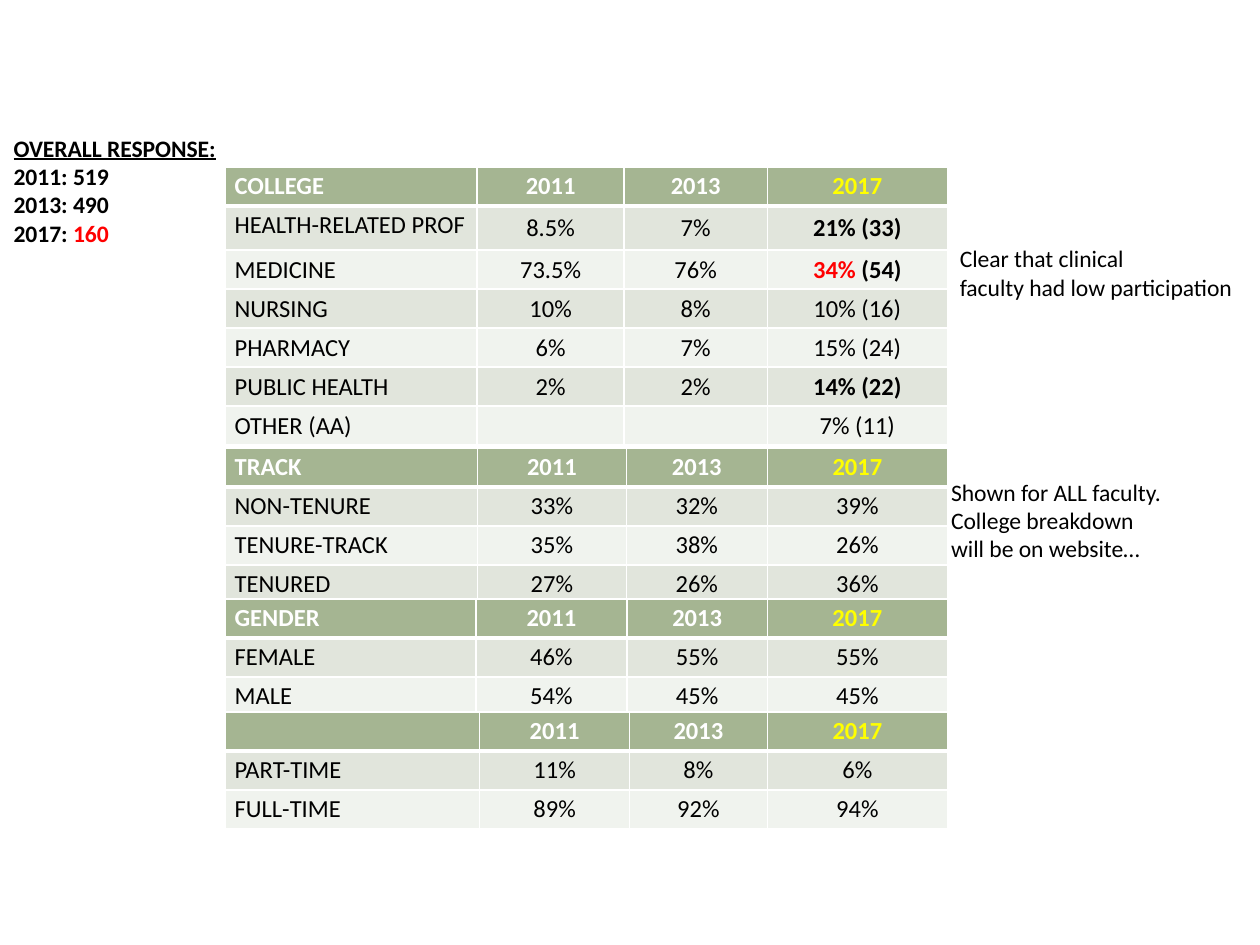
from dataclasses import dataclass
from typing import NamedTuple

import lxml.etree
import pptx
import pptx.dml.color
import pptx.enum.text
import pptx.oxml.ns
import pptx.util

Pt = pptx.util.Pt
FONT = "Calibri"
BLACK, WHITE, RED, YELLOW = "000000", "FFFFFF", "FF0000", "FFFF00"
HEADER_FILL = "A5B592"
BAND_FILLS = ("E1E5DC", "F0F3EE")
TABLE_LEFT, TABLE_WIDTH, LAST_COLUMN = 128.9, 412.6, 103
ROW_HEIGHT = 22.3
TABLE_SIZE, NOTE_SIZE = 14, 13.5


class Span(NamedTuple):
    text: str
    color: str = BLACK
    bold: bool = False
    underline: bool = False


Spans = tuple[Span, ...]


@dataclass
class Note:
    left: float
    top: float
    width: float
    height: float
    lines: list[Spans]


@dataclass
class Breakdown:
    title: str
    top: float
    columns: tuple[float, float]
    rows: list[tuple[str | Spans, ...]]
    first_row: float = ROW_HEIGHT


def bold(text: str, color: str = BLACK, underline: bool = False) -> Span:
    return Span(text, color, True, underline)


NOTES = [
    Note(0.7, 72.7, 131.8, 72.7, [
        (bold("OVERALL RESPONSE:", underline=True),),
        (bold("2011: 519"),),
        (bold("2013: 490"),),
        (bold("2017:"), bold(" 160", RED)),
    ]),
    Note(541.4, 136.1, 172.8, 40.3, [
        (Span("Clear that clinical"),),
        (Span("faculty had low participation"),),
    ]),
    Note(536.4, 269.3, 136.1, 56.2, [
        (Span("Shown for ALL faculty."),),
        (Span("College breakdown"),),
        (Span("will be on website…"),),
    ]),
]

BREAKDOWNS = [
    Breakdown("TRACK", 255.9, (144, 85), [
        ("NON-TENURE", "33%", "32%", "39%"),
        ("TENURE-TRACK", "35%", "38%", "26%"),
        ("TENURED", "27%", "26%", "36%"),
    ]),
    Breakdown("GENDER", 342.3, (143, 86.5), [
        ("FEMALE", "46%", "55%", "55%"),
        ("MALE", "54%", "45%", "45%"),
    ]),
    Breakdown("", 406.8, (145.2, 85.7), [
        ("PART-TIME", "11%", "8%", "6%"),
        ("FULL-TIME", "89%", "92%", "94%"),
    ]),
    Breakdown("COLLEGE", 95.4, (143.8, 84), [
        ("HEALTH-RELATED PROF", "8.5%", "7%", (bold("21% (33)"),)),
        ("MEDICINE", "73.5%", "76%", (bold("34%", RED), bold(" (54)"))),
        ("NURSING", "10%", "8%", "10% (16)"),
        ("PHARMACY", "6%", "7%", "15% (24)"),
        ("PUBLIC HEALTH", "2%", "2%", (bold("14% (22)"),)),
        ("OTHER (AA)", "", "", "7% (11)"),
    ], first_row=25.3),
]


def rgb(color: str) -> pptx.dml.color.RGBColor:
    return pptx.dml.color.RGBColor.from_string(color)


def write_spans(para, spans: Spans, size: float) -> None:
    para.font.name = FONT
    para.font.size = Pt(size)
    for item in spans:
        span = para.add_run()
        span.text = item.text
        span.font.bold = item.bold
        span.font.underline = item.underline
        span.font.color.rgb = rgb(item.color)


def set_borders(cell, top: float, bottom: float) -> None:
    properties = cell._tc.get_or_add_tcPr()
    qn = pptx.oxml.ns.qn
    for tag, width in (("a:lnL", 1), ("a:lnR", 1), ("a:lnT", top), ("a:lnB", bottom)):
        line = lxml.etree.SubElement(properties, qn(tag), w=str(Pt(width)))
        fill = lxml.etree.SubElement(line, qn("a:solidFill"))
        lxml.etree.SubElement(fill, qn("a:srgbClr"), val=WHITE)


def draw_cell(cell, spans: Spans, row: int, column: int) -> None:
    set_borders(cell, top=3 if row == 1 else 1, bottom=3 if row == 0 else 1)
    cell.fill.solid()
    cell.fill.fore_color.rgb = rgb(BAND_FILLS[(row - 1) % 2] if row else HEADER_FILL)
    cell.margin_left = cell.margin_right = Pt(5.2)
    cell.margin_top = cell.margin_bottom = Pt(2.6)
    para = cell.text_frame.paragraphs[0]
    if column:
        cell.vertical_anchor = pptx.enum.text.MSO_ANCHOR.MIDDLE
        para.alignment = pptx.enum.text.PP_ALIGN.CENTER
    write_spans(para, spans, TABLE_SIZE)
    if not spans:
        lxml.etree.SubElement(para._p, pptx.oxml.ns.qn("a:endParaRPr"), sz=str(TABLE_SIZE * 100))


def draw_breakdown(page, breakdown: Breakdown) -> None:
    title = (bold(breakdown.title, WHITE),) if breakdown.title else ()
    years = [(bold(year, color),) for year, color in
             (("2011", WHITE), ("2013", WHITE), ("2017", YELLOW))]
    rows = [(title, *years), *breakdown.rows]
    heights = [ROW_HEIGHT, breakdown.first_row] + [ROW_HEIGHT] * (len(rows) - 2)
    third = TABLE_WIDTH - sum(breakdown.columns) - LAST_COLUMN
    widths = (*breakdown.columns, third, LAST_COLUMN)
    table = page.shapes.add_table(
        len(rows), len(widths), Pt(TABLE_LEFT), Pt(breakdown.top),
        Pt(TABLE_WIDTH), Pt(sum(heights))).table
    for column, width in zip(table.columns, widths):
        column.width = Pt(width)
    for row_index, (values, height) in enumerate(zip(rows, heights)):
        table.rows[row_index].height = Pt(height)
        for column_index, value in enumerate(values):
            if isinstance(value, str):
                value = (Span(value),) if value else ()
            draw_cell(table.cell(row_index, column_index), value, row_index, column_index)


def draw_note(page, note: Note) -> None:
    box = page.shapes.add_textbox(Pt(note.left), Pt(note.top), Pt(note.width), Pt(note.height))
    frame = box.text_frame
    frame.word_wrap = False
    frame.auto_size = pptx.enum.text.MSO_AUTO_SIZE.SHAPE_TO_FIT_TEXT
    for index, spans in enumerate(note.lines):
        para = frame.add_paragraph() if index else frame.paragraphs[0]
        write_spans(para, spans, NOTE_SIZE)


def main() -> None:
    """Build the slide of survey response rates by college, track, gender and workload."""
    deck = pptx.Presentation()
    deck.slide_width, deck.slide_height = Pt(720), Pt(540)
    page = deck.slides.add_slide(deck.slide_layouts[6])
    for breakdown in BREAKDOWNS:
        draw_breakdown(page, breakdown)
    for note in NOTES:
        draw_note(page, note)
    deck.save("out.pptx")


if __name__ == "__main__":
    main()
